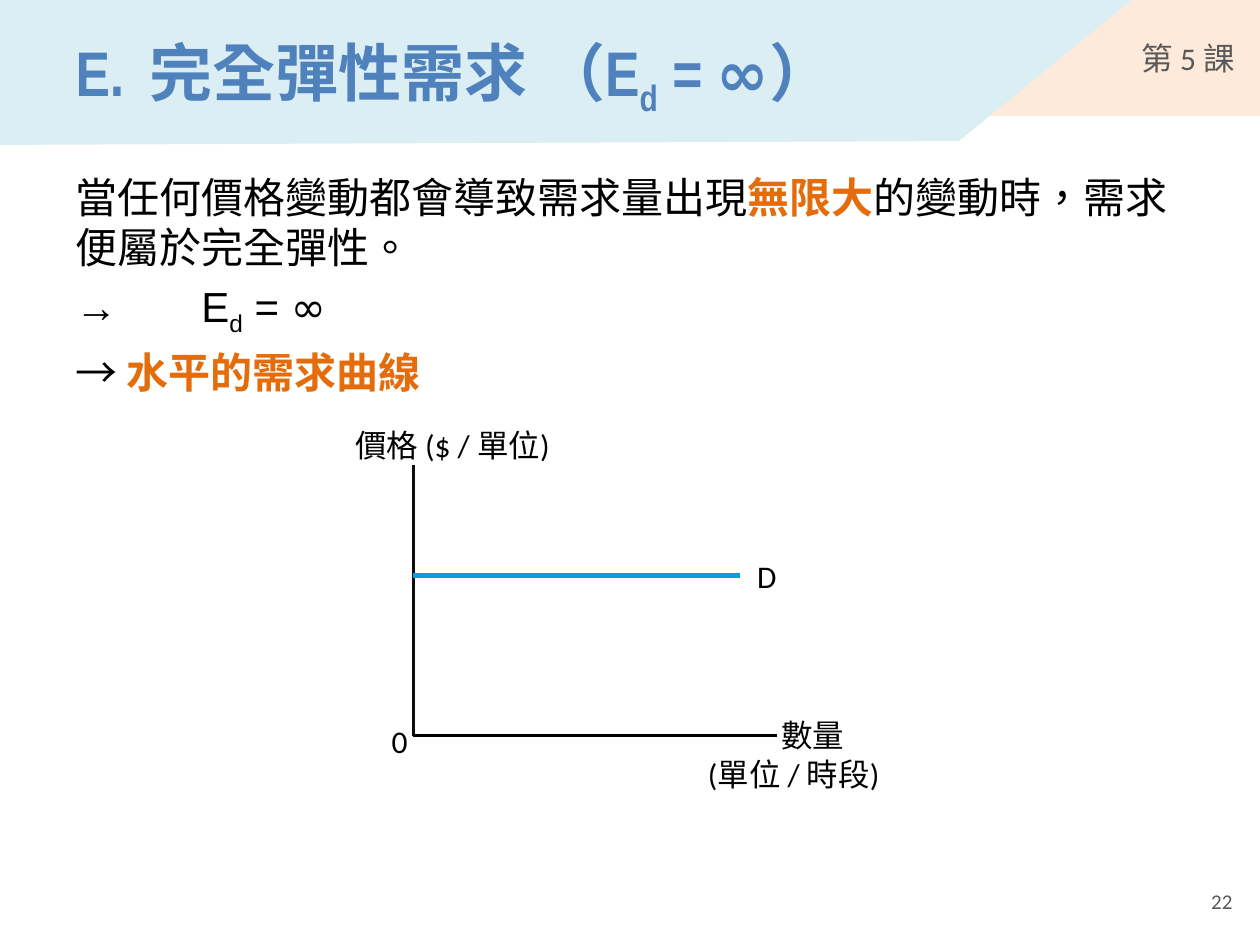
from lxml import etree
from pptx import Presentation
from pptx import util as u
from pptx.dml import color
from pptx.enum import lang, shapes, text
from pptx.oxml import ns

COLORS = {
    "peach": "FDEADA", "pale_blue": "DBEEF4", "title": "4F81BD", "grey": "595959",
    "black": "000000", "axis": "0D0D0D", "accent": "E46C0A", "demand": "009FE3",
}


def rgb(name):
    return color.RGBColor.from_string(COLORS[name])


def add_runs(paragraph, runs, size):
    for wording, font_name, color_name, bold, subscript in runs:
        run = paragraph.add_run()
        run.text = wording
        run.font.size = u.Pt(size)
        run.font.name = font_name
        run.font.bold = bold
        run.font.color.rgb = rgb(color_name)
        run.font.language_id = lang.MSO_LANGUAGE_ID.TAIWAN if hasattr(
            lang.MSO_LANGUAGE_ID, "TAIWAN") else lang.MSO_LANGUAGE_ID.TRADITIONAL_CHINESE
        if subscript:
            run.font._element.set("baseline", "-25000")


presentation = Presentation()
presentation.slide_width = u.Inches(10)
presentation.slide_height = u.Inches(7.5)
slide = presentation.slides.add_slide(presentation.slide_layouts[5])

lesson = slide.shapes.add_shape(
    shapes.MSO_SHAPE.RECTANGLE, u.Inches(7.36), 0, u.Inches(2.64), u.Inches(0.92))
builder = slide.shapes.build_freeform(0, 0, scale=u.Inches(1) / 100)
builder.add_line_segments([(898, 0), (761, 112), (0, 115)], close=True)
banner = builder.convert_to_shape()
for shape, fill in ((lesson, "peach"), (banner, "pale_blue")):
    shape.shadow.inherit = False
    shape.fill.solid()
    shape.fill.fore_color.rgb = rgb(fill)
    shape.line.fill.background()
lesson.text_frame.margin_right = u.Inches(0.2)
lesson.text_frame.vertical_anchor = text.MSO_ANCHOR.MIDDLE
paragraph = lesson.text_frame.paragraphs[0]
paragraph.alignment = text.PP_ALIGN.RIGHT
add_runs(paragraph, [("第 5 課", "Calibri", "grey", False, False)], 18)

title = slide.shapes.title
banner._element.addnext(title._element)
title.left, title.top = u.Inches(0.5), u.Inches(0.21)
title.width, title.height = u.Inches(7.33), u.Inches(0.79)
title.text_frame.auto_size = text.MSO_AUTO_SIZE.NONE
title.text_frame.vertical_anchor = text.MSO_ANCHOR.MIDDLE
paragraph = title.text_frame.paragraphs[0]
paragraph.alignment = text.PP_ALIGN.LEFT
properties = paragraph._p.get_or_add_pPr()
properties.set("marL", str(u.Inches(0.59)))
properties.set("indent", str(-u.Inches(0.59)))
add_runs(paragraph, [
    ("E.\t完全彈性需求 （E", "Arial Narrow", "title", True, False),
    ("d", "Arial Narrow", "title", True, True),
    (" = ", "Arial Narrow", "title", True, False),
    ("∞", "DejaVu Sans", "title", True, False),
    ("）", "Arial Narrow", "title", True, False),
], 36)

body = slide.shapes.add_textbox(u.Inches(0.5), u.Inches(1.31), u.Inches(9), u.Inches(1.88))
body.text_frame.word_wrap = True
body_paragraphs = [
    [("當任何價格變動都會導致需求量出現", "Arial", "black", False, False),
     ("無限大", "Arial", "accent", True, False),
     ("的變動時，需求便屬於完全彈性。", "Arial", "black", False, False)],
    [("→\tE", "Arial", "black", False, False),
     ("d", "Arial", "black", False, True),
     (" = ", "Arial", "black", False, False),
     ("∞", "DejaVu Sans", "black", False, False)],
    [("→ ", "Arial", "black", False, False),
     ("水平的需求曲線", "Arial", "accent", True, False)],
]
for index, runs in enumerate(body_paragraphs):
    paragraph = body.text_frame.paragraphs[0]
    if index:
        paragraph = body.text_frame.add_paragraph()
        paragraph.space_before = u.Pt(4.8)
    if "\t" in runs[0][0]:
        tabs = etree.SubElement(paragraph._p.get_or_add_pPr(), ns.qn("a:tabLst"))
        etree.SubElement(tabs, ns.qn("a:tab"), pos=str(u.Inches(1)), algn="l")
    add_runs(paragraph, runs, 24)

origin_x, origin_y, demand_y = 3.28, 5.84, 4.57
graph_lines = [
    (origin_x, 3.69, origin_x, origin_y, "axis", 1.5),
    (6.17, origin_y, origin_x, origin_y, "black", 1.5),
    (5.87, demand_y, origin_x, demand_y, "demand", 3),
]
for x1, y1, x2, y2, color_name, width in graph_lines:
    line = slide.shapes.add_connector(
        shapes.MSO_CONNECTOR.STRAIGHT,
        u.Inches(x1), u.Inches(y1), u.Inches(x2), u.Inches(y2))
    line.line.color.rgb = rgb(color_name)
    line.line.width = u.Pt(width)
    etree.SubElement(line._element.spPr, ns.qn("a:effectLst"))

labels = [
    ("0", 3.01, 5.68, 0.58, 18, "black", text.PP_ALIGN.LEFT),
    ("數量", 6.1, 5.63, 0.79, 18, "black", text.PP_ALIGN.LEFT),
    ("價格 ($ / 單位)", 2.72, 3.33, 1.86, 18, "black", text.PP_ALIGN.LEFT),
    ("D", 5.91, 4.37, 0.51, 18, "black", text.PP_ALIGN.LEFT),
    ("(單位 / 時段)", 5.52, 5.94, 1.99, 18, "black", text.PP_ALIGN.LEFT),
    ("22", 7.55, 6.95, 2.33, 12, "grey", text.PP_ALIGN.RIGHT),
]
for wording, left, top, width, size, color_name, alignment in labels:
    label = slide.shapes.add_textbox(
        u.Inches(left), u.Inches(top), u.Inches(width), u.Inches(0.4))
    label.text_frame.word_wrap = True
    if color_name == "grey":
        label.text_frame.vertical_anchor = text.MSO_ANCHOR.MIDDLE
    paragraph = label.text_frame.paragraphs[0]
    paragraph.alignment = alignment
    add_runs(paragraph, [(wording, "Calibri", color_name, False, False)], size)

presentation.save("out.pptx")
